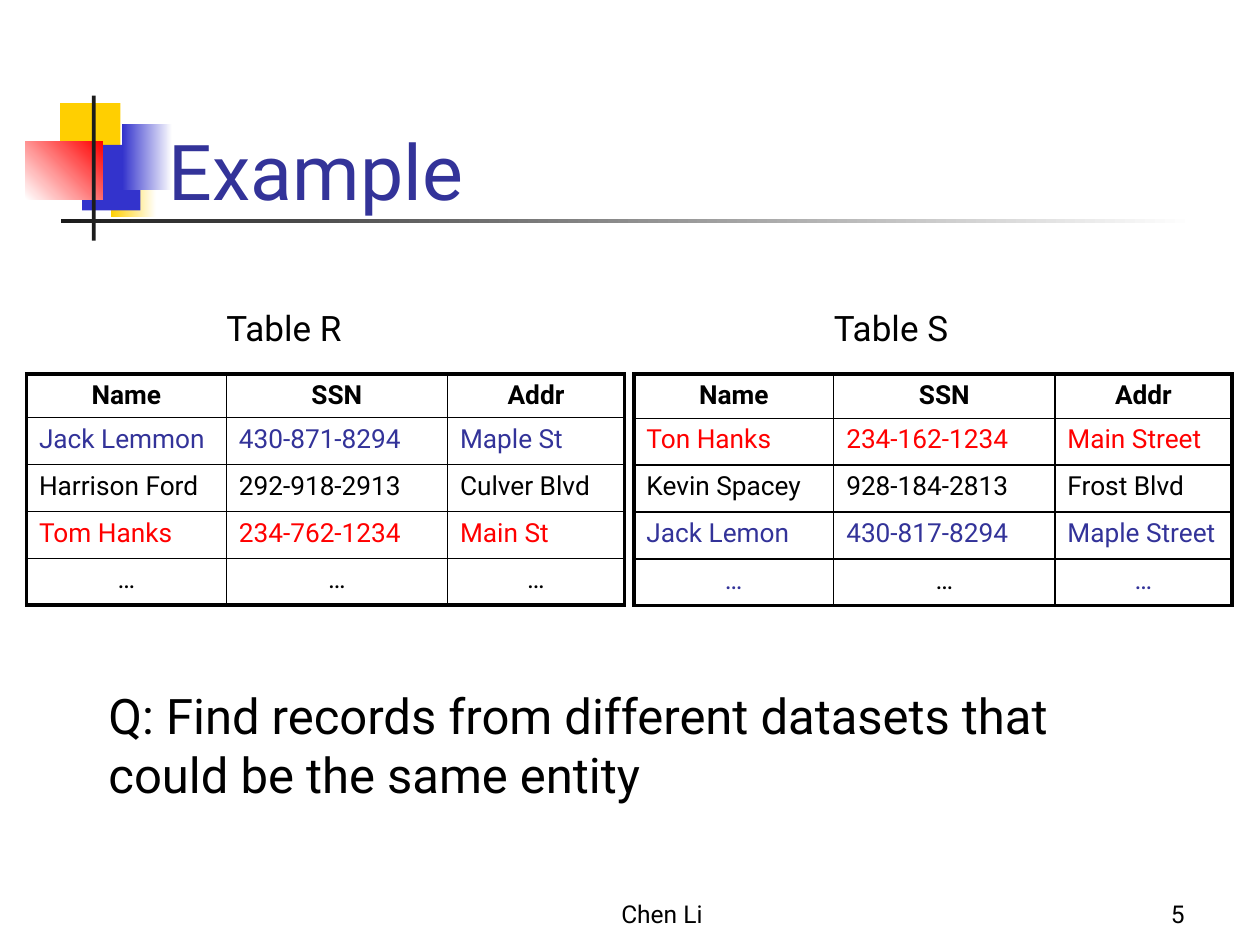
from dataclasses import dataclass

from lxml import etree
from pptx import Presentation
from pptx.dml.color import RGBColor
from pptx.enum.shapes import MSO_SHAPE
from pptx.enum.text import MSO_ANCHOR, MSO_AUTO_SIZE, PP_ALIGN
from pptx.oxml.ns import qn
from pptx.util import Pt

RECTANGLE = MSO_SHAPE.RECTANGLE
TOP, BOTTOM = MSO_ANCHOR.TOP, MSO_ANCHOR.BOTTOM
LEFT, CENTER, RIGHT = PP_ALIGN.LEFT, PP_ALIGN.CENTER, PP_ALIGN.RIGHT
NO_AUTOFIT = MSO_AUTO_SIZE.NONE


@dataclass(frozen=True)
class Theme:
    font: str = "Roboto"
    title_size: float = 44
    question_size: float = 28
    label_size: float = 20
    cell_size: float = 15
    footer_size: float = 14
    black: str = "000000"
    white: str = "FFFFFF"
    navy: str = "333399"
    red: str = "FF0000"
    yellow: str = "FFCF01"
    blue: str = "3333CC"
    charcoal: str = "1C1C1C"
    outer_line: float = 2.25
    inner_line: float = 1


THEME = Theme()

# Table layout and records, each row with the colours of its cells
TABLE_TOP = 213.8
COLUMN_WIDTHS = (114.2, 126.4, 101.2)
HEADER_HEIGHT, ROW_HEIGHT = 24.5, 26.8
HEADER = ("Name", "SSN", "Addr")
MORE = ("…",) * 3
BLACK_ROW = (THEME.black,) * 3
NAVY_ROW = (THEME.navy,) * 3
RED_ROW = (THEME.red,) * 3
TABLE_R = [
    (HEADER, BLACK_ROW),
    (("Jack Lemmon", "430-871-8294", "Maple St"), NAVY_ROW),
    (("Harrison Ford", "292-918-2913", "Culver Blvd"), BLACK_ROW),
    (("Tom Hanks", "234-762-1234", "Main St"), RED_ROW),
    (MORE, BLACK_ROW),
]
TABLE_S = [
    (HEADER, BLACK_ROW),
    (("Ton Hanks", "234-162-1234", "Main Street"), RED_ROW),
    (("Kevin Spacey", "928-184-2813", "Frost Blvd"), BLACK_ROW),
    (("Jack Lemon", "430-817-8294", "Maple Street"), NAVY_ROW),
    (MORE, (THEME.navy, THEME.black, THEME.navy)),
]


def write(frame, text, size, color=THEME.black, align=LEFT, bold=False):
    frame.text = text
    para = frame.paragraphs[0]
    para.alignment = align
    para.font.name = THEME.font
    para.font.size = Pt(size)
    para.font.bold = bold
    para.font.color.rgb = RGBColor.from_string(color)


def add_text(page, area, text, size, align=LEFT, anchor=TOP, wrap=True):
    box = page.shapes.add_textbox(*map(Pt, area))
    box.text_frame.word_wrap = wrap
    box.text_frame.vertical_anchor = anchor
    write(box.text_frame, text, size, align=align)


def add_block(page, area, color, end_color=None, angle=0):
    """Add a borderless rectangle, solid or fading to end_color."""
    block = page.shapes.add_shape(RECTANGLE, *map(Pt, area))
    block.shadow.inherit = False
    block.line.fill.background()
    if end_color is None:
        block.fill.solid()
        block.fill.fore_color.rgb = RGBColor.from_string(color)
        return
    block.fill.gradient()
    block.fill.gradient_angle = angle
    for stop, stop_color in zip(block.fill.gradient_stops, (color, end_color)):
        stop.color.rgb = RGBColor.from_string(stop_color)


def set_borders(cell, widths):
    """Set the left, right, top and bottom lines of a cell."""
    properties = cell._tc.get_or_add_tcPr()
    for index, (side, width) in enumerate(zip("LRTB", widths)):
        line = etree.Element(qn(f"a:ln{side}"), w=str(Pt(width)))
        fill = etree.SubElement(line, qn("a:solidFill"))
        etree.SubElement(fill, qn("a:srgbClr"), val=THEME.black)
        properties.insert(index, line)


def add_records(page, left, records):
    last_row, last_column = len(records) - 1, len(HEADER) - 1
    height = HEADER_HEIGHT + ROW_HEIGHT * last_row
    area = (left, TABLE_TOP, sum(COLUMN_WIDTHS), height)
    table = page.shapes.add_table(
        len(records), len(HEADER), *map(Pt, area)).table
    table.first_row = table.horz_banding = False
    for column, width in zip(table.columns, COLUMN_WIDTHS):
        column.width = Pt(width)
    for r, (texts, colors) in enumerate(records):
        table.rows[r].height = Pt(HEADER_HEIGHT if r == 0 else ROW_HEIGHT)
        align = CENTER if r in (0, last_row) else LEFT
        for c, (text, color) in enumerate(zip(texts, colors)):
            cell = table.cell(r, c)
            cell.fill.background()
            write(cell.text_frame, text, THEME.cell_size, color, align, r == 0)
            edges = (c == 0, c == last_column, r == 0, r == last_row)
            set_borders(cell, [THEME.outer_line if edge else THEME.inner_line
                               for edge in edges])


def add_decoration(page):
    add_block(page, (34.4, 59, 34.4, 37.6), THEME.yellow)
    add_block(page, (63.3, 86.4, 26, 37.4), THEME.yellow, THEME.white)
    add_block(page, (47, 82.8, 33.2, 37.4), THEME.blue)
    add_block(page, (69.8, 71, 28.8, 37.4), THEME.blue, THEME.white)
    add_block(page, (14.4, 80.6, 44.2, 33.2), THEME.white, THEME.red, 45)
    add_block(page, (52.5, 54.7, 2.2, 82.8), THEME.charcoal)
    add_block(page, (34.8, 125.1, 648, 2.2), THEME.charcoal, THEME.white)


def add_title(page, text):
    title = page.shapes.title
    title.left, title.top, title.width, title.height = map(
        Pt, (89.3, 36.7, 448.6, 90))
    title.text_frame.vertical_anchor = BOTTOM
    title.text_frame.auto_size = NO_AUTOFIT
    write(title.text_frame, text, THEME.title_size, THEME.navy)
    # Bring the title in front of the decoration
    page.shapes._spTree.append(title._element)


def main():
    deck = Presentation()
    deck.slide_width, deck.slide_height = Pt(720), Pt(540)
    page = deck.slides.add_slide(deck.slide_layouts[5])

    # Heading
    add_decoration(page)
    add_title(page, "Example")

    # Two labelled tables side by side
    for left, name, records in ((15.1, "Table R", TABLE_R),
                                (362.2, "Table S", TABLE_S)):
        add_records(page, left, records)
        add_text(page, (left + 107.2, 171.4, 81, 31), name,
                 THEME.label_size, wrap=False)

    # Question
    add_text(page, (54.9, 388.4, 617, 113.8),
             "Q: Find records from different datasets that could be "
             "the same entity", THEME.question_size)

    # Footer
    add_text(page, (534.2, 498.2, 149.8, 36), "5",
             THEME.footer_size, RIGHT, BOTTOM)
    add_text(page, (264.2, 498.2, 228.2, 36), "Chen Li",
             THEME.footer_size, CENTER, BOTTOM)

    deck.save("out.pptx")


if __name__ == "__main__":
    main()
